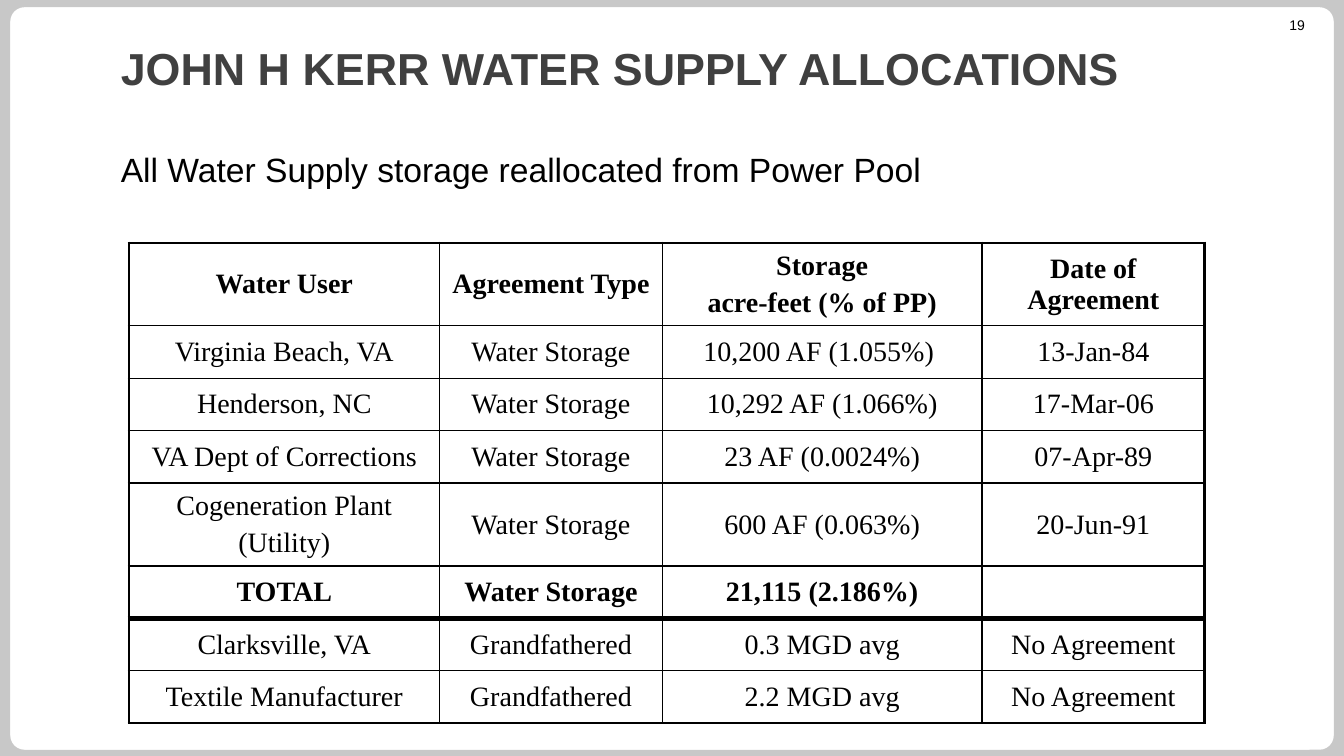
from lxml.etree import SubElement
from pptx import Presentation
from pptx.dml.color import RGBColor
from pptx.enum.shapes import MSO_SHAPE
from pptx.enum.text import MSO_ANCHOR as Anchor, PP_ALIGN as Align
from pptx.oxml.ns import qn
from pptx.util import Inches, Pt

TITLE = "JOHN H KERR WATER SUPPLY ALLOCATIONS"
SUBTITLE = "All Water Supply storage reallocated from Power Pool"
PAGE_NUMBER = "19"
ALLOCATIONS = [
    ("Water User", "Agreement Type", "Storage\nacre-feet (% of PP)", "Date of Agreement"),
    ("Virginia Beach, VA", "Water Storage", "10,200 AF (1.055%) ", "13-Jan-84"),
    ("Henderson, NC", "Water Storage", "10,292 AF (1.066%)", "17-Mar-06"),
    ("VA Dept of Corrections", "Water Storage", "23 AF (0.0024%)", "07-Apr-89"),
    ("Cogeneration Plant\n(Utility)", "Water Storage", "600 AF (0.063%)", "20-Jun-91"),
    ("TOTAL", "Water Storage", "21,115 (2.186%)", ""),
    ("Clarksville, VA", "Grandfathered", "0.3 MGD avg", "No Agreement"),
    ("Textile Manufacturer", "Grandfathered", "2.2 MGD avg", "No Agreement"),
]
COLUMN_WIDTHS = (3.08, 2.21, 3.17, 2.21)
ROW_HEIGHT, TALL_ROW_HEIGHT = 0.52, 0.72
HEADER_ROW, TOTAL_ROW = 0, 5
THIN, OUTER, DIVIDER = 1, 2.25, 4.5

GRAY = RGBColor(0xC8, 0xC8, 0xC8)
WHITE = RGBColor(0xFF, 0xFF, 0xFF)
BLACK = RGBColor(0, 0, 0)
DARK = RGBColor(0x40, 0x40, 0x40)


def style_font(paragraph, size, name="Arial", color=BLACK, bold=False):
    font = paragraph.font
    font.size, font.name, font.bold = Pt(size), name, bold
    font.color.rgb = color


def add_text(slide, box, text, size, color=BLACK, bold=False, align=Align.LEFT,
             anchor=Anchor.TOP, wrap=True, vertical_inset=0.05):
    shape = slide.shapes.add_textbox(*map(Inches, box))
    frame = shape.text_frame
    frame.word_wrap = wrap
    frame.vertical_anchor = anchor
    frame.margin_top = frame.margin_bottom = Inches(vertical_inset)
    frame.text = text
    paragraph = frame.paragraphs[0]
    paragraph.alignment = align
    style_font(paragraph, size, color=color, bold=bold)


def add_borders(cell, widths):
    properties = cell._tc.get_or_add_tcPr()
    for side, width in zip("LRTB", widths):
        line = SubElement(properties, qn(f"a:ln{side}"), w=str(Pt(width)))
        fill = SubElement(line, qn("a:solidFill"))
        SubElement(fill, qn("a:srgbClr"), val=str(BLACK))


def fill_cell(cell, text, bold):
    cell.fill.solid()
    cell.fill.fore_color.rgb = WHITE
    cell.vertical_anchor = Anchor.MIDDLE
    cell.text = text
    for index, paragraph in enumerate(cell.text_frame.paragraphs):
        paragraph.alignment = Align.CENTER
        if index:
            paragraph.space_before = Pt(4)
        style_font(paragraph, 20, "Times New Roman", bold=bold)


def add_allocation_table(slide):
    row_count, column_count = len(ALLOCATIONS), len(COLUMN_WIDTHS)
    frame = slide.shapes.add_table(row_count, column_count, Inches(1.28), Inches(2.41),
                                   Inches(sum(COLUMN_WIDTHS)), Inches(4.56))
    table = frame.table
    table.first_row = table.horz_banding = False
    for column, width in zip(table.columns, COLUMN_WIDTHS):
        column.width = Inches(width)
    row_lines = [OUTER] + [THIN] * (row_count - 1) + [OUTER]
    row_lines[TOTAL_ROW + 1] = DIVIDER
    column_lines = [OUTER] + [THIN] * (column_count - 1) + [OUTER]
    for r, texts in enumerate(ALLOCATIONS):
        tall = any("\n" in text for text in texts)
        table.rows[r].height = Inches(TALL_ROW_HEIGHT if tall else ROW_HEIGHT)
        for c, text in enumerate(texts):
            cell = table.cell(r, c)
            add_borders(cell, column_lines[c:c + 2] + row_lines[r:r + 2])
            fill_cell(cell, text, r in (HEADER_ROW, TOTAL_ROW))


def main():
    presentation = Presentation()
    presentation.slide_width, presentation.slide_height = Inches(13.33), Inches(7.5)
    slide = presentation.slides.add_slide(presentation.slide_layouts[6])
    slide.background.fill.solid()
    slide.background.fill.fore_color.rgb = GRAY

    panel = slide.shapes.add_shape(MSO_SHAPE.ROUNDED_RECTANGLE, Inches(0.07), Inches(0.04),
                                   Inches(13.19), Inches(7.43))
    panel.adjustments[0] = 0.023
    panel.shadow.inherit = False
    panel.fill.solid()
    panel.fill.fore_color.rgb = WHITE
    panel.line.color.rgb = GRAY
    panel.line.width = Pt(4.5)

    add_text(slide, (12.2, 0.16, 0.84, 0.17), PAGE_NUMBER, 10, align=Align.RIGHT,
             vertical_inset=0)
    add_text(slide, (1.1, 0.18, 10.57, 0.99), TITLE, 32, DARK, True, anchor=Anchor.MIDDLE)
    add_allocation_table(slide)
    add_text(slide, (1.1, 1.43, 8.22, 0.5), SUBTITLE, 24, wrap=False)
    presentation.save("out.pptx")


if __name__ == "__main__":
    main()
